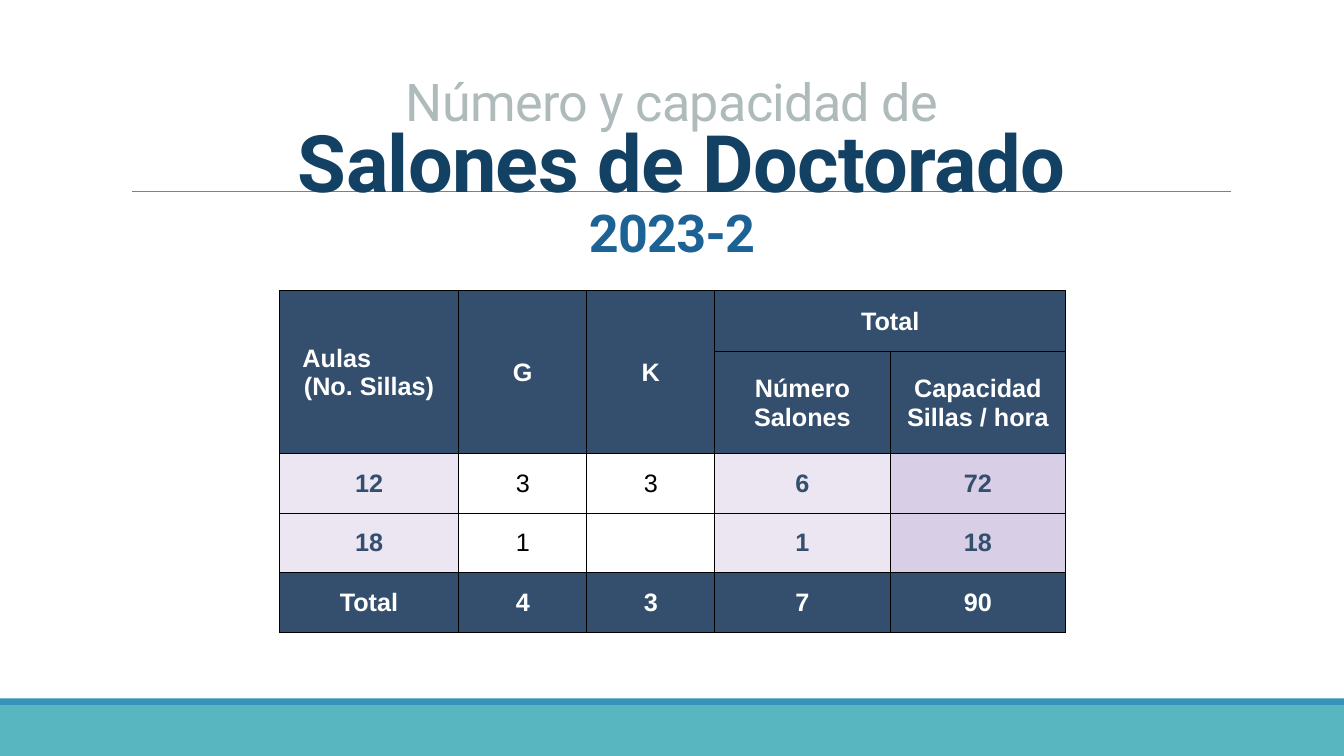
from lxml import etree
from pptx import Presentation
from pptx.dml.color import RGBColor
from pptx.enum.shapes import MSO_CONNECTOR as Connector, MSO_SHAPE as Preset
from pptx.enum.text import MSO_ANCHOR as Anchor, MSO_AUTO_SIZE as AutoSize, PP_ALIGN as Align
from pptx.oxml.ns import qn
from pptx.util import Inches, Pt

COLORS = {
    "teal": "58B6C0", "blue": "3494BA", "rule": "808080",
    "lead": "AFBABB", "headline": "134163", "term": "1D6294",
    "navy": "344E6D", "lilac": "EBE6F2", "violet": "D8CEE6",
    "white": "FFFFFF", "black": "000000",
}
SLIDE_W, SLIDE_H = 13.33, 7.5

# Wording, font format and line spacing of each title line
TITLE_LINES = [
    ("Número y capacidad de", {"size": Pt(37.2), "bold": False}, "lead", 0.8),
    (" Salones de Doctorado", {"size": Pt(56.6), "bold": True}, "headline", 0.8),
    ("2023-2", {"size": Pt(37.2), "bold": True}, "term", 0.9),
]

COLUMN_WIDTHS = [1.78, 1.27, 1.27, 1.74, 1.74]
ROW_HEIGHTS = [0.61, 1.01, 0.59, 0.59, 0.59]
ROOMS = [
    ["Aulas\n(No. Sillas)", "G", "K", "Total", ""],
    ["", "", "", "Número Salones", "Capacidad Sillas / hora"],
    ["12", "3", "3", "6", "72"],
    ["18", "1", "", "1", "18"],
    ["Total", "4", "3", "7", "90"],
]
# Merged header cells: first and last (row, column)
MERGES = [((0, 0), (1, 0)), ((0, 1), (1, 1)), ((0, 2), (1, 2)), ((0, 3), (0, 4))]
# Fill, text colour and weight: header and total rows, then body columns
HEADER_STYLE = ("navy", "white", True)
BODY_STYLES = [
    ("lilac", "navy", True),
    (None, "black", False),
    (None, "black", False),
    ("lilac", "navy", True),
    ("violet", "navy", True),
]


def rgb(name):
    return RGBColor.from_string(COLORS[name])


def set_all(target, values):
    for attribute, value in values.items():
        setattr(target, attribute, value)


def add_footer(slide, left, top, width, height):
    edge = 0.07
    for color, y, h in [("teal", top + edge, height - edge), ("blue", top, edge)]:
        band = slide.shapes.add_shape(
            Preset.RECTANGLE, Inches(left), Inches(y), Inches(width), Inches(h))
        band.shadow.inherit = False
        band.fill.solid()
        band.fill.fore_color.rgb = rgb(color)
        band.line.fill.background()


def add_heading(slide, left, top, width, height):
    # Thin rule behind the headline
    rule_y = Inches(top + 1.28)
    rule = slide.shapes.add_connector(
        Connector.STRAIGHT, Inches(left + 1.31), rule_y, Inches(left + 12.21), rule_y)
    rule.line.color.rgb = rgb("rule")
    rule.line.width = Pt(0.5)
    etree.SubElement(rule.element.spPr, qn("a:effectLst"))

    # Three-line title, brought in front of the rule
    title = slide.shapes.title
    title.element.getparent().append(title.element)
    set_all(title, {"left": Inches(left), "top": Inches(top),
                    "width": Inches(width), "height": Inches(height)})
    frame = title.text_frame
    set_all(frame, {"word_wrap": True, "auto_size": AutoSize.NONE,
                    "vertical_anchor": Anchor.BOTTOM})
    frame.text = "\n".join(line[0] for line in TITLE_LINES)
    for paragraph, (_, font, color, spacing) in zip(frame.paragraphs, TITLE_LINES):
        set_all(paragraph, {"alignment": Align.CENTER, "line_spacing": spacing})
        run = paragraph.runs[0]
        set_all(run.font, {"name": "Roboto", **font})
        run.font.color.rgb = rgb(color)
        run.font._element.set("spc", "-50")


def add_borders(cell):
    properties = cell._tc.get_or_add_tcPr()
    for side in ("lnL", "lnR", "lnT", "lnB"):
        border = etree.SubElement(properties, qn(f"a:{side}"), w=str(Pt(0.5)))
        fill = etree.SubElement(border, qn("a:solidFill"))
        etree.SubElement(fill, qn("a:srgbClr"), val=COLORS["black"])


def format_cell(cell, text, fill, color, bold):
    inset = Inches(0.01)
    set_all(cell, {"margin_left": inset, "margin_right": inset, "margin_top": inset,
                   "margin_bottom": 0, "vertical_anchor": Anchor.MIDDLE})
    add_borders(cell)
    if fill:
        cell.fill.solid()
        cell.fill.fore_color.rgb = rgb(fill)
    else:
        cell.fill.background()
    cell.text = text
    for paragraph in cell.text_frame.paragraphs:
        paragraph.alignment = Align.CENTER
        set_all(paragraph.font, {"name": "Arial", "size": Pt(18), "bold": bold})
        for run in paragraph.runs:
            set_all(run.font, {"name": "Arial", "size": Pt(18), "bold": bold})
            run.font.color.rgb = rgb(color)


def add_rooms_table(slide, left, top, width, height):
    rooms = slide.shapes.add_table(
        len(ROOMS), len(COLUMN_WIDTHS),
        Inches(left), Inches(top), Inches(width), Inches(height)).table
    set_all(rooms, {"first_row": False, "horz_banding": False})
    for column, column_width in zip(rooms.columns, COLUMN_WIDTHS):
        column.width = Inches(column_width)
    for row, row_height in zip(rooms.rows, ROW_HEIGHTS):
        row.height = Inches(row_height)

    for r, texts in enumerate(ROOMS):
        for c, text in enumerate(texts):
            style = BODY_STYLES[c] if r in (2, 3) else HEADER_STYLE
            format_cell(rooms.cell(r, c), text, *style)
    for first, last in MERGES:
        rooms.cell(*first).merge(rooms.cell(*last))

    # "Aulas" starts at the left, above the centred seat count
    aulas = rooms.cell(0, 0).text_frame.paragraphs[0]
    aulas.alignment = Align.LEFT
    aulas._p.get_or_add_pPr().set("marL", str(Inches(0.22)))


def main():
    deck = Presentation()
    set_all(deck, {"slide_width": Inches(SLIDE_W), "slide_height": Inches(SLIDE_H)})
    slide = deck.slides.add_slide(deck.slide_layouts[5])
    add_footer(slide, 0, 6.93, SLIDE_W, 0.57)
    add_heading(slide, 0, 0.62, SLIDE_W, 2.05)
    add_rooms_table(slide, 2.77, 2.88, sum(COLUMN_WIDTHS), sum(ROW_HEIGHTS))
    deck.save("out.pptx")


if __name__ == "__main__":
    main()
